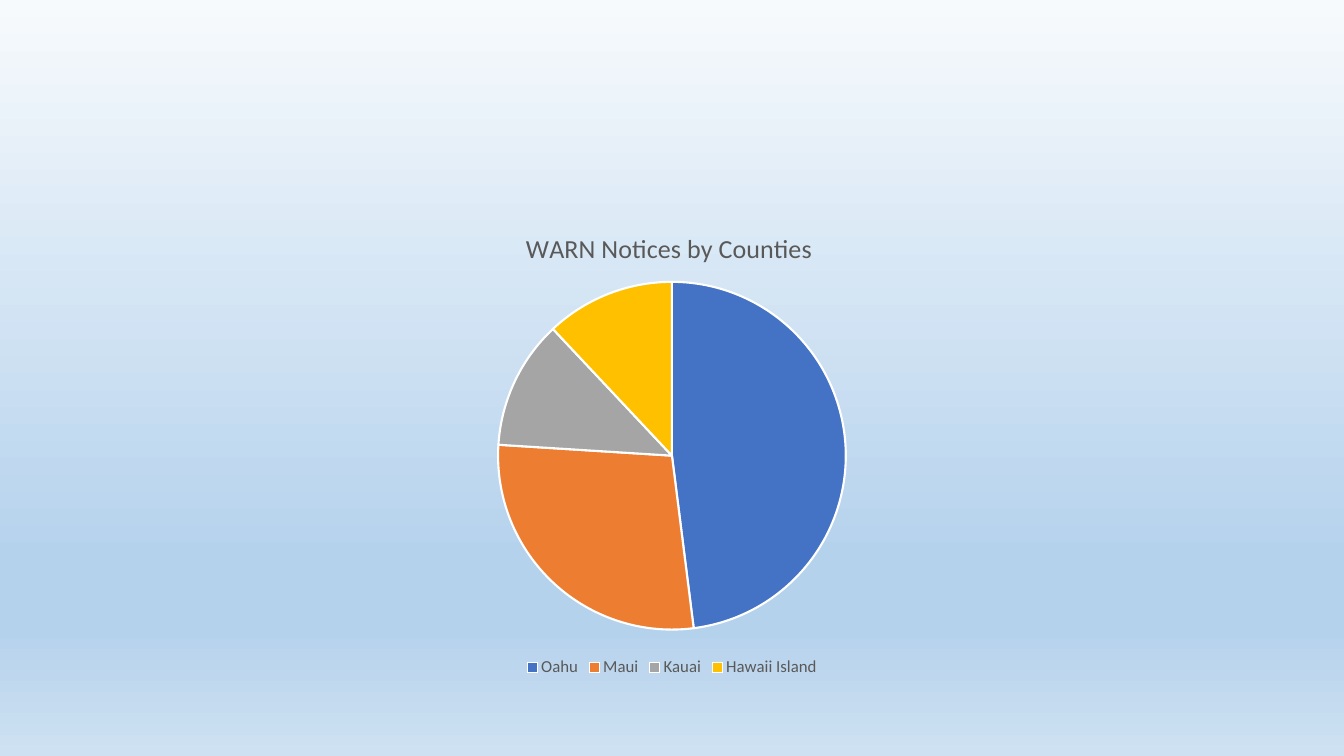
import copy

import pptx
import pptx.chart.data
import pptx.dml.color
import pptx.enum.chart
import pptx.oxml
import pptx.oxml.ns
import pptx.util

Pt = pptx.util.Pt
RGBColor = pptx.dml.color.RGBColor
qn = pptx.oxml.ns.qn

SKY_PALE = RGBColor(0xF7, 0xFA, 0xFD)
SKY_BLUE = RGBColor(0xB5, 0xD2, 0xEC)
SKY_LIGHT = RGBColor(0xCE, 0xE1, 0xF2)
TEXT_GRAY = RGBColor(0x59, 0x59, 0x59)
WHITE = RGBColor(0xFF, 0xFF, 0xFF)
BLUE = RGBColor(0x44, 0x72, 0xC4)
ORANGE = RGBColor(0xED, 0x7D, 0x31)
GRAY = RGBColor(0xA5, 0xA5, 0xA5)
GOLD = RGBColor(0xFF, 0xC0, 0x00)

BACKGROUND_STOPS = [(0, SKY_PALE), (0.74, SKY_BLUE), (0.83, SKY_BLUE), (1, SKY_LIGHT)]
COUNTIES = [
    ("Oahu", 48, BLUE),
    ("Maui", 28, ORANGE),
    ("Kauai", 12, GRAY),
    ("Hawaii Island", 12, GOLD),
]


def place(element, index, target, **fractions):
    """Set a manual layout, in fractions of the chart area."""
    for layout in element.findall(qn("c:layout")):
        element.remove(layout)
    tags = [f'<c:layoutTarget val="{target}"/>'] if target else []
    tags += [f'<c:{axis}Mode val="edge"/>' for axis in "xy"]
    tags += [f'<c:{name} val="{value}"/>' for name, value in fractions.items()]
    element.insert(index, pptx.oxml.parse_xml(
        f'<c:layout {pptx.oxml.ns.nsdecls("c")}><c:manualLayout>'
        f'{"".join(tags)}</c:manualLayout></c:layout>'))


presentation = pptx.Presentation()
presentation.slide_width = Pt(960)
presentation.slide_height = Pt(540)
slide = presentation.slides.add_slide(presentation.slide_layouts[6])

# Background gradient, top to bottom
fill = slide.background.fill
fill.gradient()
fill.gradient_angle = 270
stop_list = next(slide.element.iter(qn("a:gsLst")))
while len(stop_list) < len(BACKGROUND_STOPS):
    stop_list.append(copy.deepcopy(stop_list[0]))
for stop, (position, color) in zip(fill.gradient_stops, BACKGROUND_STOPS):
    stop.position = position
    stop.color.rgb = color

# Pie chart
chart_data = pptx.chart.data.CategoryChartData()
chart_data.categories = [name for name, _, _ in COUNTIES]
chart_data.add_series("Series 1", [value for _, value, _ in COUNTIES])
chart = slide.shapes.add_chart(
    pptx.enum.chart.XL_CHART_TYPE.PIE, Pt(66), Pt(144), Pt(828), Pt(342.6), chart_data
).chart
chart.font.name = "Calibri"
chart.font.size = Pt(10)
plot = chart.plots[0]
plot.vary_by_categories = True
for index, (_, _, color) in enumerate(COUNTIES):
    slice_format = plot.series[0].points[index].format
    slice_format.fill.solid()
    slice_format.fill.fore_color.rgb = color
    slice_format.line.color.rgb = WHITE
    slice_format.line.width = Pt(1.5)
plot_area = next(chart.element.iter(qn("c:plotArea")))
place(plot_area, 0, "inner", x=0.35, y=0.16, w=0.3, h=0.74)

# Title
chart.has_title = True
title = chart.chart_title
title.include_in_layout = False
paragraph = title.text_frame.paragraphs[0]
paragraph.text = "WARN Notices by Counties"
title_font = paragraph.runs[0].font
title_font.name = "Calibri"
title_font.size = Pt(18.6)
title_font.bold = False
title_font.color.rgb = TEXT_GRAY
place(next(chart.element.iter(qn("c:title"))), 1, None, x=0.37, y=0.05)

# Legend
chart.has_legend = True
legend = chart.legend
legend.position = pptx.enum.chart.XL_LEGEND_POSITION.BOTTOM
legend.include_in_layout = False
legend.font.name = "Calibri"
legend.font.size = Pt(12)
legend.font.color.rgb = TEXT_GRAY

presentation.save("out.pptx")
